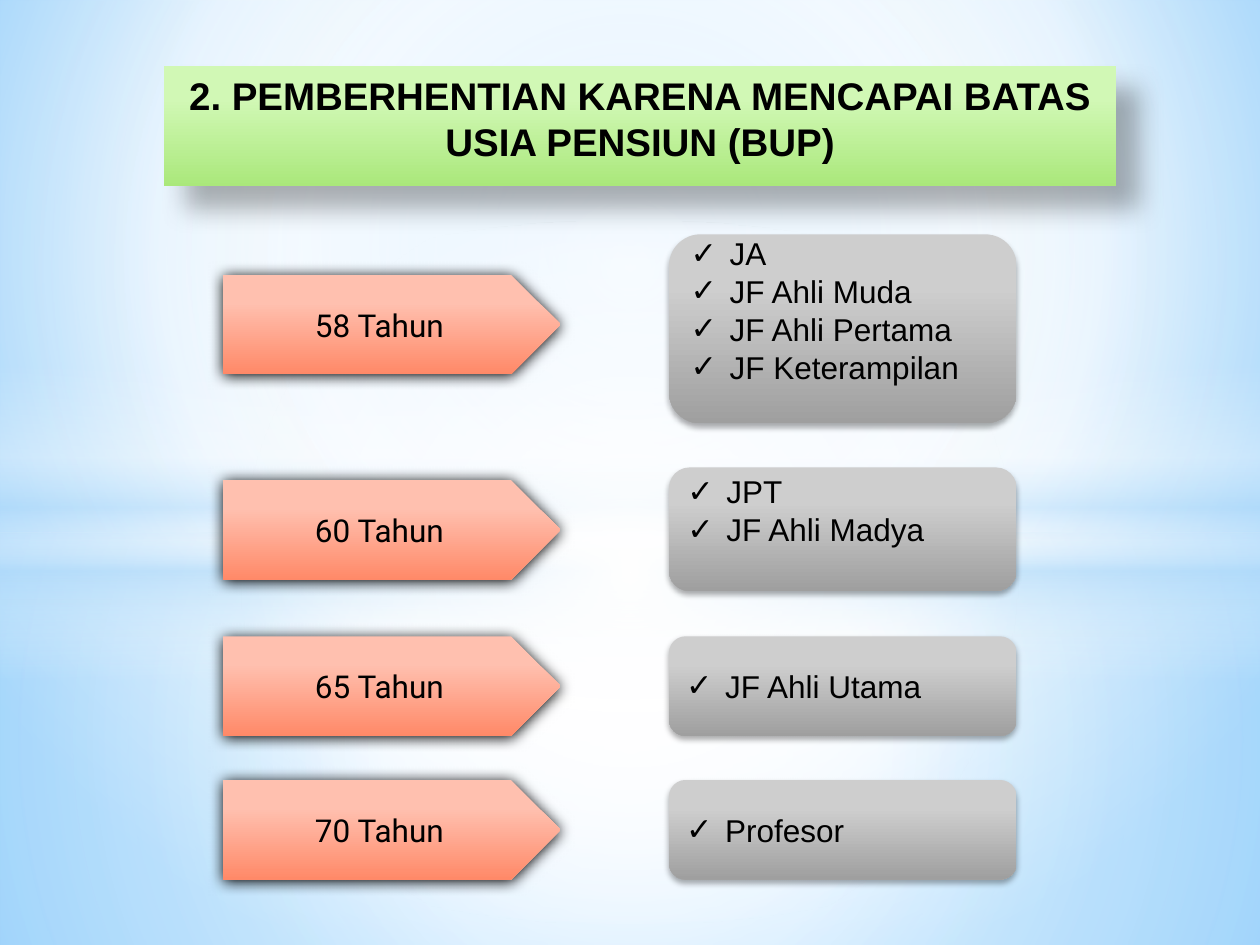
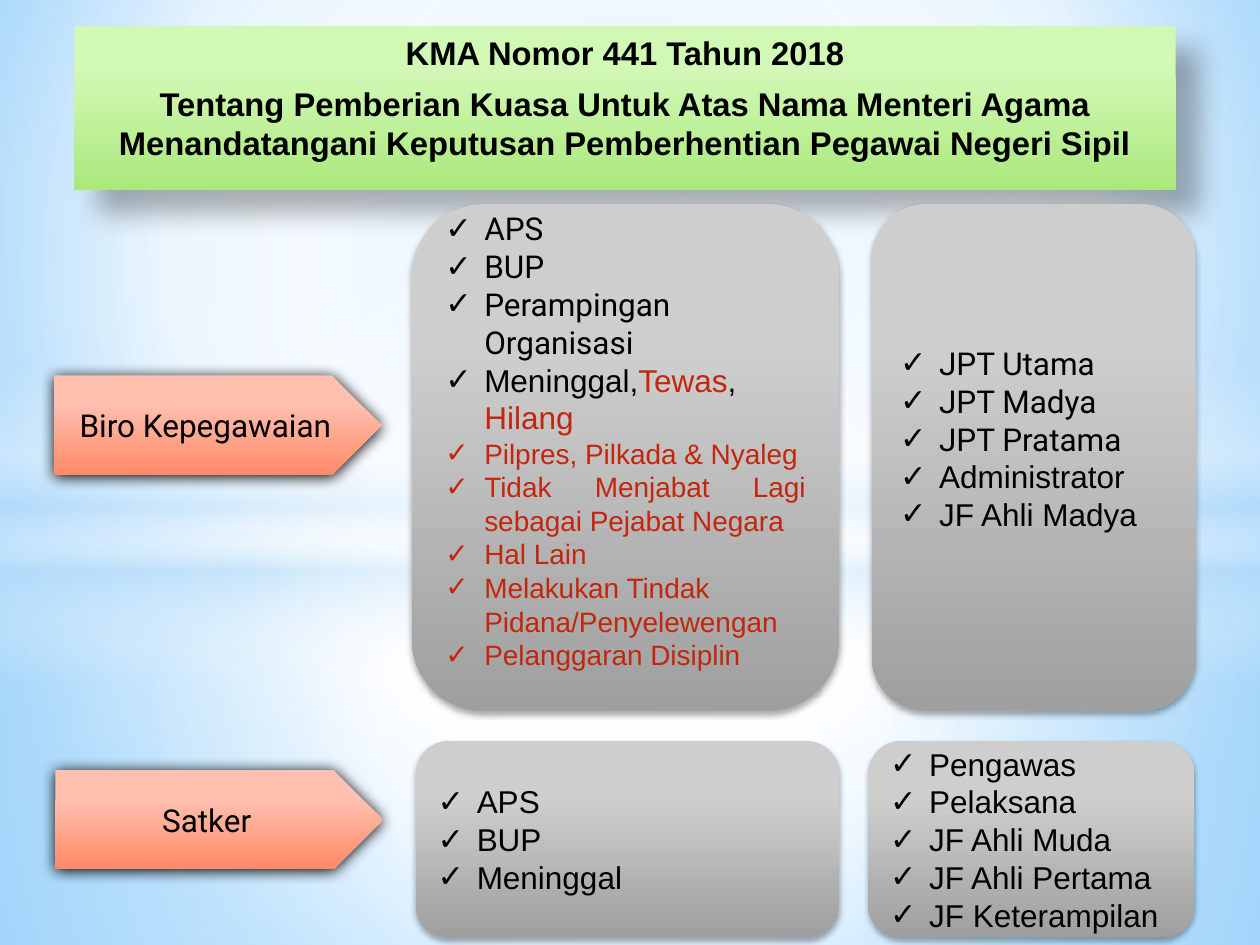
"""Build two slides on civil servant retirement rules."""
import pptx
import pptx.dml.color
import pptx.enum.shapes
import pptx.enum.text
import pptx.oxml
import pptx.oxml.ns
import pptx.util
from lxml import etree

Inches = pptx.util.Inches
Pt = pptx.util.Pt
qn = pptx.oxml.ns.qn
ALIGN = pptx.enum.text.PP_ALIGN
ANCHOR = pptx.enum.text.MSO_ANCHOR
SHAPE = pptx.enum.shapes.MSO_SHAPE

COLORS = {
    "text": "000000", "red": "C3260C", "white": "FFFFFF", "haze": "B4DCFA",
    "sky": "9ED5FF", "deep": "5BB9FF",
    "green_top": "D1F8B5", "green_end": "AAE87B",
    "coral_top": "FFC0AF", "coral_end": "FF8968",
    "gray_top": "CECECE", "gray_end": "9F9F9F",
}
STYLES = {
    "title": {"colors": ("green_top", "green_end"), "shadow": (30, 15, 18, 45)},
    "arrow": {"colors": ("coral_top", "coral_end"), "shadow": (100, 8.5, 1, 90)},
    "card": {"colors": ("gray_top", "gray_end"), "shadow": (32, 3.5, 2.2, 90)},
}
CENTER = (50, 50, 50, 50)
BACKDROP = [
    (SHAPE.RECTANGLE, (0, 4.23, 10, 3.27), CENTER,
     [(0, "white", 91), (37, "white", 76), (100, "haze", 79)]),
    (SHAPE.RECTANGLE, (0, 0, 10, 4.23), CENTER,
     [(0, "white", 89), (48, "white", 62), (100, "haze", 79)]),
    (SHAPE.RECTANGLE, (0, 2.9, 10, 2.5), None,
     [(0, "white", 0), (29, "white", 30), (45, "haze", 40),
      (55, "white", 26), (65, "haze", 60), (100, "white", 0)]),
    (SHAPE.OVAL, (0, 1.75, 10, 5.58), CENTER,
     [(0, "white", 100), (54, "white", 0)]),
]
INDENT = 0.31
ARROW_HEIGHT = 0.79


def paint_gradient(fill, holder, stops, focus=None):
    """Fill with a vertical gradient, or a circular one around a focus box."""
    fill.solid()
    gradient = etree.Element(qn("a:gradFill"), rotWithShape="1")
    stop_list = etree.SubElement(gradient, qn("a:gsLst"))
    for position, color, opacity in stops:
        stop = etree.SubElement(stop_list, qn("a:gs"), pos=str(position * 1000))
        tone = etree.SubElement(stop, qn("a:srgbClr"), val=COLORS[color])
        if opacity < 100:
            etree.SubElement(tone, qn("a:alpha"), val=str(opacity * 1000))
    if focus:
        circle = etree.SubElement(gradient, qn("a:path"), path="circle")
        sides = {side: str(value * 1000) for side, value in zip("ltrb", focus)}
        etree.SubElement(circle, qn("a:fillToRect"), sides)
    else:
        etree.SubElement(gradient, qn("a:lin"), ang="5400000", scaled="0")
    holder.replace(holder.find(qn("a:solidFill")), gradient)


def style_shape(shape, style):
    """Give a shape the gradient and shadow of a named style."""
    properties = shape.element.spPr
    top, end = STYLES[style]["colors"]
    paint_gradient(shape.fill, properties, [(28, top, 100), (100, end, 100)])
    shape.line.fill.background()
    shape.shadow.inherit = False
    opacity, blur, distance, angle = STYLES[style]["shadow"]
    shadow = etree.SubElement(
        properties.find(qn("a:effectLst")), qn("a:outerShdw"),
        blurRad=str(int(Pt(blur))), dist=str(int(Pt(distance))),
        dir=str(angle * 60000), algn="tl", rotWithShape="0")
    tone = etree.SubElement(shadow, qn("a:srgbClr"), val=COLORS["text"])
    etree.SubElement(tone, qn("a:alpha"), val=str(opacity * 1000))


def write_line(text_frame, text, *, size=18, font="Arial", color="text", bold=False,
               align=ALIGN.CENTER, before=0, after=0, check=False):
    """Add a paragraph; text is a string or a list of (string, color) pairs."""
    paragraph = text_frame.add_paragraph() if text_frame.text else text_frame.paragraphs[0]
    paragraph.alignment = align
    paragraph.space_before, paragraph.space_after = Pt(before), Pt(after)
    if check:
        properties = paragraph._p.get_or_add_pPr()
        properties.set("marL", str(int(Inches(INDENT))))
        properties.set("indent", str(int(Inches(-INDENT))))
        etree.SubElement(properties, qn("a:buFont"), typeface="Arial")
        etree.SubElement(properties, qn("a:buChar"), char="✓")
    for part, tone in [(text, color)] if isinstance(text, str) else text:
        run = paragraph.add_run()
        run.text = part
        run.font.size, run.font.name, run.font.bold = Pt(size), font, bold
        run.font.color.rgb = pptx.dml.color.RGBColor.from_string(COLORS[tone])


def add_backdrop(presentation, slide):
    """Place the sky background and its light bands on the slide master."""
    master = presentation.slide_master
    fill = master.background.fill
    fill.solid()
    paint_gradient(fill, master.element.find(".//" + qn("p:bgPr")),
                   [(0, "sky", 100), (60, "white", 100), (100, "deep", 100)],
                   (20, 10, 20, 60))
    for index, (kind, box, focus, stops) in enumerate(BACKDROP):
        band = slide.shapes.add_shape(kind, *map(Inches, box))
        paint_gradient(band.fill, band.element.spPr, stops, focus)
        band.line.fill.background()
        band.shadow.inherit = False
        band.element.find(".//" + qn("p:cNvPr")).set("id", str(100 + index))
        master.shapes.element.insert(2 + index, band.element)


def add_title(slide, box, lines, size):
    """Move the title placeholder into the box and write its lines."""
    title = slide.shapes.title
    title.left, title.top, title.width, title.height = map(Inches, box)
    style_shape(title, "title")
    text_frame = title.text_frame
    text_frame.word_wrap = True
    text_frame.auto_size = pptx.enum.text.MSO_AUTO_SIZE.NONE
    text_frame.vertical_anchor = ANCHOR.TOP
    for line in lines:
        write_line(text_frame, line, size=size, bold=True, before=size * 0.2, after=3)


def add_block(slide, kind, style, box):
    """Add a styled shape and return its text frame."""
    shape = slide.shapes.add_shape(kind, *map(Inches, box))
    style_shape(shape, style)
    text_frame = shape.text_frame
    text_frame.word_wrap = True
    text_frame.vertical_anchor = ANCHOR.MIDDLE
    return text_frame


def add_arrow(slide, left, top, width, label):
    """Add a coral arrow with a label."""
    box = (left, top, width, ARROW_HEIGHT)
    write_line(add_block(slide, SHAPE.PENTAGON, "arrow", box), label, font="Roboto")


def add_card(slide, box, items, lift=0):
    """Add a gray card of checked items, with lift as extra room below them."""
    text_frame = add_block(slide, SHAPE.ROUNDED_RECTANGLE, "card", box)
    text_frame.margin_bottom = Inches(0.05 + lift)
    for item in items:
        text, options = (item, {}) if isinstance(item, str) else item
        write_line(text_frame, text, check=True, **{"align": ALIGN.JUSTIFY, **options})


def build_age_slide(slide):
    """Fill the slide that pairs retirement ages with positions."""
    add_title(slide, (1.3, 0.52, 7.56, 0.96),
              ["2. PEMBERHENTIAN KARENA MENCAPAI BATAS USIA PENSIUN (BUP)"], 22)
    rows = [
        ("58 Tahun", 2.18, 1.86, 1.5, 0.3,
         ["JA", "JF Ahli Muda", "JF Ahli Pertama", "JF Keterampilan"]),
        ("60 Tahun", 3.81, 3.71, 0.98, 0.3, ["JPT", "JF Ahli Madya"]),
        ("65 Tahun", 5.05, 5.05, ARROW_HEIGHT, 0, ["JF Ahli Utama"]),
        ("70 Tahun", 6.19, 6.19, ARROW_HEIGHT, 0, ["Profesor"]),
    ]
    for age, arrow_top, card_top, card_height, lift, positions in rows:
        add_arrow(slide, 1.77, arrow_top, 2.68, age)
        add_card(slide, (5.31, card_top, 2.76, card_height), positions, lift)


def build_authority_slide(slide):
    """Fill the slide that shows which office signs which decisions."""
    add_title(slide, (0.59, 0.21, 8.74, 1.3), [
        "KMA Nomor 441 Tahun 2018",
        "Tentang Pemberian Kuasa Untuk Atas Nama Menteri Agama "
        "Menandatangani Keputusan Pemberhentian Pegawai Negeri Sipil"], 18.7)
    left = {"align": ALIGN.LEFT}
    roboto = {**left, "font": "Roboto"}
    red = {"size": 16, "color": "red"}
    bureau_cases = [
        *((case, roboto) for case in ("APS", "BUP", "Perampingan Organisasi")),
        ([("Meninggal,", "text"), ("Tewas", "red"), (", ", "text"), ("Hilang", "red")], left),
        ("Pilpres, Pilkada & Nyaleg", red),
        ("Tidak Menjabat Lagi sebagai Pejabat Negara", red),
        ("Hal Lain", red),
        ("Melakukan Tindak Pidana/Penyelewengan", {**red, **left}),
        ("Pelanggaran Disiplin", {**red, **left}),
    ]
    bureau_positions = [
        *((position, roboto) for position in ("JPT Utama", "JPT Madya", "JPT Pratama")),
        ("Administrator", left),
        "JF Ahli Madya",
    ]
    add_arrow(slide, 0.43, 2.98, 2.6, "Biro Kepegawaian")
    add_arrow(slide, 0.44, 6.11, 2.6, "Satker")
    add_card(slide, (3.27, 1.62, 3.39, 4.02), bureau_cases, 0.27)
    add_card(slide, (3.3, 5.88, 3.36, 1.56), ["APS", "BUP", "Meninggal"])
    add_card(slide, (6.92, 1.62, 2.57, 4.02), bureau_positions, 0.3)
    add_card(slide, (6.89, 5.88, 2.59, 1.56),
             ["Pengawas", "Pelaksana", "JF Ahli Muda", "JF Ahli Pertama", "JF Keterampilan"])


def main():
    """Build and save the presentation."""
    presentation = pptx.Presentation()
    presentation.slide_width, presentation.slide_height = Inches(10), Inches(7.5)
    title_only = presentation.slide_layouts.get_by_name("Title Only")
    age_slide = presentation.slides.add_slide(title_only)
    add_backdrop(presentation, age_slide)
    build_age_slide(age_slide)
    build_authority_slide(presentation.slides.add_slide(title_only))
    presentation.save("out.pptx")


if __name__ == "__main__":
    main()
